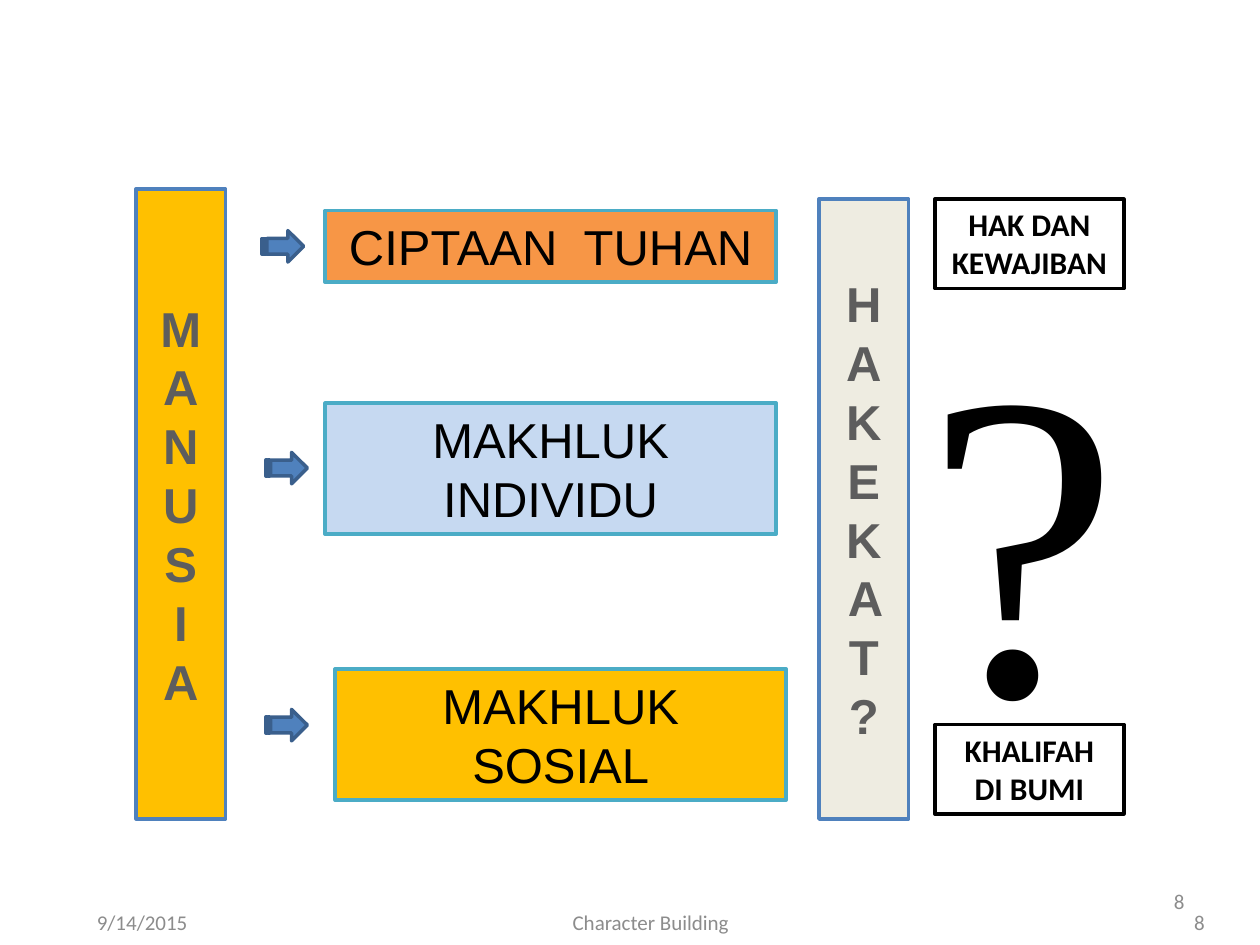
from pptx import Presentation
from pptx.dml.color import RGBColor
from pptx.enum.shapes import MSO_SHAPE
from pptx.enum.text import MSO_ANCHOR, MSO_AUTO_SIZE, PP_ALIGN
from pptx.util import Inches, Pt

BLACK = RGBColor(0x00, 0x00, 0x00)
WHITE = RGBColor(0xFF, 0xFF, 0xFF)
GOLD = RGBColor(0xFF, 0xC0, 0x00)
ORANGE = RGBColor(0xF7, 0x96, 0x46)
PALE_BLUE = RGBColor(0xC6, 0xD9, 0xF1)
CREAM = RGBColor(0xEE, 0xEC, 0xE1)
BLUE = RGBColor(0x4F, 0x81, 0xBD)
DARK_BLUE = RGBColor(0x3A, 0x5F, 0x8C)
TEAL = RGBColor(0x4B, 0xAC, 0xC6)
DARK_GREY = RGBColor(0x5D, 0x5D, 0x5D)
FOOTER_GREY = RGBColor(0x8C, 0x8C, 0x8C)

# Column measures, in inches
BAR_WIDTH = 0.71
ASPECT_WIDTH = 3.58
NOTE_LEFT, NOTE_WIDTH, NOTE_HEIGHT = 7.42, 1.5, 0.71
ARROW_WIDTH, ARROW_HEIGHT = 0.33, 0.25
FOOTER_TOP, FOOTER_HEIGHT = 7.12, 0.4


def write_text(shape, text, *, size, font="Arial", color=BLACK, bold=False,
               align=PP_ALIGN.CENTER, anchor=MSO_ANCHOR.TOP, grow=True):
    """Fill a shape with text, one paragraph per line."""
    frame = shape.text_frame
    frame.word_wrap = True
    frame.vertical_anchor = anchor
    frame.auto_size = MSO_AUTO_SIZE.SHAPE_TO_FIT_TEXT if grow else MSO_AUTO_SIZE.NONE
    frame.text = text
    for para in frame.paragraphs:
        para.alignment = align
        for span in para.runs:
            span.font.name = font
            span.font.size = Pt(size)
            span.font.bold = bold
            span.font.color.rgb = color


def add_panel(page, area, fill, line, kind=MSO_SHAPE.RECTANGLE):
    panel = page.shapes.add_shape(kind, *map(Inches, area))
    panel.shadow.inherit = False
    panel.fill.solid()
    panel.fill.fore_color.rgb = fill
    panel.line.color.rgb = line
    panel.line.width = Pt(2)
    return panel


def add_label(page, area, text, **text_format):
    box = page.shapes.add_textbox(*map(Inches, area))
    write_text(box, text, **text_format)


def add_letter_bar(page, left, top, height, word, fill):
    """Add a tall bar whose letters are stacked upright."""
    bar = add_panel(page, (left, top, BAR_WIDTH, height), fill, BLUE)
    write_text(bar, word, size=28, color=DARK_GREY, bold=True)
    bar.text_frame._txBody.bodyPr.set("vert", "wordArtVert")


def add_aspect(page, left, top, height, text, fill, arrow_left, arrow_top):
    """Add an aspect of the human being and the arrow that leads to it."""
    panel = add_panel(page, (left, top, ASPECT_WIDTH, height), fill, TEAL)
    write_text(panel, text, size=28)
    add_panel(page, (arrow_left, arrow_top, ARROW_WIDTH, ARROW_HEIGHT),
              BLUE, DARK_BLUE, MSO_SHAPE.STRIPED_RIGHT_ARROW)


def add_note(page, top, text):
    note = add_panel(page, (NOTE_LEFT, top, NOTE_WIDTH, NOTE_HEIGHT), WHITE, BLACK)
    write_text(note, text, size=18, font="Calibri", bold=True)


def add_footer(page, left, width, text, align, top=FOOTER_TOP):
    add_label(page, (left, top, width, FOOTER_HEIGHT), text, size=12,
              font="Calibri", color=FOOTER_GREY, align=align,
              anchor=MSO_ANCHOR.MIDDLE, grow=False)


def main():
    deck = Presentation()
    deck.slide_width, deck.slide_height = Inches(10), Inches(7.5)
    page = deck.slides.add_slide(deck.slide_layouts[6])

    # Subject and its three aspects
    add_letter_bar(page, 1.08, 1.5, 5, "MANUSIA", GOLD)
    add_aspect(page, 2.58, 1.67, 0.57, "CIPTAAN  TUHAN", ORANGE, 2.08, 1.83)
    add_aspect(page, 2.58, 3.2, 1.04, "MAKHLUK INDIVIDU", PALE_BLUE, 2.11, 3.59)
    add_aspect(page, 2.66, 5.31, 1.04, "MAKHLUK SOSIAL", GOLD, 2.11, 5.63)

    # The question and its two answers
    add_letter_bar(page, 6.5, 1.58, 4.92, "HAKEKAT?", CREAM)
    add_label(page, (7.25, 2, 1.25, 4.31), "?", size=250,
              font="Times New Roman", align=PP_ALIGN.LEFT)
    add_note(page, 1.58, "HAK DAN\nKEWAJIBAN")
    add_note(page, 5.75, "KHALIFAH DI BUMI")

    # Footer line
    add_footer(page, 0.67, 2.33, "9/14/2015", PP_ALIGN.LEFT)
    add_footer(page, 3.58, 3.17, "Character Building", PP_ALIGN.CENTER)
    add_footer(page, 7.17, 2.33, "8", PP_ALIGN.RIGHT, top=6.95)
    add_footer(page, 7.33, 2.33, "8", PP_ALIGN.RIGHT)

    deck.save("out.pptx")


if __name__ == "__main__":
    main()
